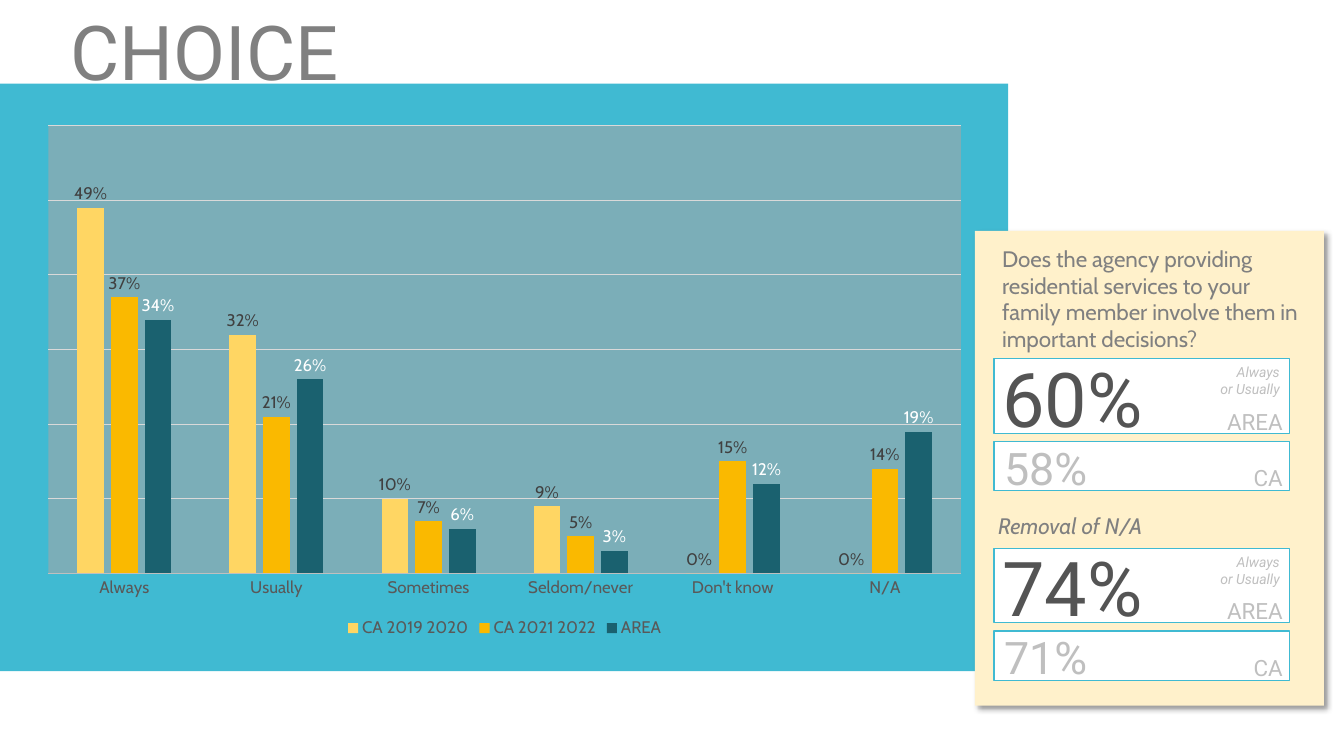
from lxml import etree
from pptx import Presentation
from pptx.chart.data import CategoryChartData
from pptx.dml.color import RGBColor
from pptx.enum.chart import XL_CHART_TYPE, XL_LABEL_POSITION, XL_LEGEND_POSITION, XL_TICK_MARK
from pptx.enum.shapes import MSO_SHAPE
from pptx.enum.text import MSO_ANCHOR, PP_ALIGN
from pptx.oxml import parse_xml
from pptx.oxml.ns import nsdecls, qn
from pptx.util import Inches, Pt

TEAL = RGBColor(0x40, 0xBA, 0xD2)
CREAM = RGBColor(0xFF, 0xF1, 0xCB)
WHITE = RGBColor(0xFF, 0xFF, 0xFF)
GREY = RGBColor(0x80, 0x80, 0x80)
DARK = RGBColor(0x54, 0x54, 0x54)
PALE = RGBColor(0xBF, 0xBF, 0xBF)
GRID = RGBColor(0xD9, 0xD9, 0xD9)
LABEL = RGBColor(0x40, 0x40, 0x40)
AXIS = RGBColor(0x59, 0x59, 0x59)

LOCAL = "AREA"
CATEGORIES = ["Always", "Usually", "Sometimes", "Seldom/never", "Don't know", "N/A"]
SERIES = [
    ("CA 2019 2020", (0.49, 0.32, 0.10, 0.09, 0, 0), RGBColor(0xFF, 0xD6, 0x63), LABEL),
    ("CA 2021 2022", (0.37, 0.21, 0.07, 0.05, 0.15, 0.14), RGBColor(0xFA, 0xB9, 0x00), LABEL),
    (LOCAL, (0.34, 0.26, 0.06, 0.03, 0.12, 0.19), RGBColor(0x1A, 0x61, 0x6F), WHITE),
]
QUESTION = ("Does the agency providing residential services to your family member "
            "involve them in important decisions?")


def set_font(font, size, color, name="Cabin", italic=False):
    font.size, font.name, font.italic = Pt(size), name, italic
    font.color.rgb = color


def fill_text(frame, text, size, color, name="Roboto", italic=False, align=PP_ALIGN.LEFT):
    frame.word_wrap = True
    frame.vertical_anchor = MSO_ANCHOR.TOP
    frame.text = text
    for para in frame.paragraphs:
        para.alignment = align
        set_font(para.runs[0].font, size, color, name, italic)


def add_text(shapes, text, left, top, width, height, **style):
    box = shapes.add_textbox(Inches(left), Inches(top), Inches(width), Inches(height))
    fill_text(box.text_frame, text, **style)


def add_rect(shapes, left, top, width, height, fill, line=None):
    rect = shapes.add_shape(MSO_SHAPE.RECTANGLE, Inches(left), Inches(top),
                            Inches(width), Inches(height))
    rect.shadow.inherit = False
    rect.fill.solid()
    rect.fill.fore_color.rgb = fill
    if line is None:
        rect.line.fill.background()
    else:
        rect.line.color.rgb = line
        rect.line.width = Pt(0.85)
    return rect


def cast_shadow(shape):
    effects = shape.element.spPr.find(qn("a:effectLst"))
    effects.append(parse_xml(
        f'<a:outerShdw {nsdecls("a")} blurRad="{Pt(4)}" dist="{Pt(3)}" dir="2700000" '
        'algn="tl" rotWithShape="0"><a:srgbClr val="000000"><a:alpha val="40000"/>'
        '</a:srgbClr></a:outerShdw>'))


def add_title(slide, left, top, width, height):
    title = slide.shapes.title
    title.left, title.top = Inches(left), Inches(top)
    title.width, title.height = Inches(width), Inches(height)
    fill_text(title.text_frame, "CHOICE", size=54, color=GREY)


def style_plot(chart):
    """Fix the inner plot frame and give it a translucent grey fill."""
    area = chart.element.chart.plotArea
    for layout in area.findall(qn("c:layout")):
        area.remove(layout)
    layout = parse_xml(f'<c:layout {nsdecls("c")}><c:manualLayout/></c:layout>')
    settings = [("layoutTarget", "inner"), ("xMode", "edge"), ("yMode", "edge"),
                ("x", "0.02"), ("y", "0.02"), ("w", "0.96"), ("h", "0.85")]
    for tag, value in settings:
        etree.SubElement(layout[0], qn(f"c:{tag}")).set("val", value)
    area.insert(0, layout)
    area.append(parse_xml(
        f'<c:spPr {nsdecls("c", "a")}><a:solidFill><a:srgbClr val="A6A6A6">'
        '<a:alpha val="58000"/></a:srgbClr></a:solidFill></c:spPr>'))


def style_axes(chart):
    cat, val = chart.category_axis, chart.value_axis
    cat.major_tick_mark = cat.minor_tick_mark = XL_TICK_MARK.NONE
    set_font(cat.tick_labels.font, 12, AXIS)
    cat.format.line.color.rgb = PALE
    cat.format.line.width = Pt(0.75)
    val.minimum_scale, val.maximum_scale, val.major_unit = 0, 0.6, 0.1
    val.visible = False
    val.has_major_gridlines = True
    val.major_gridlines.format.line.color.rgb = GRID
    val.major_gridlines.format.line.width = Pt(0.75)


def add_bars(slide, left, top, width, height):
    data = CategoryChartData(number_format="0%")
    data.categories = CATEGORIES
    for name, values, _, _ in SERIES:
        data.add_series(name, values)
    chart = slide.shapes.add_chart(XL_CHART_TYPE.COLUMN_CLUSTERED, Inches(left), Inches(top),
                                   Inches(width), Inches(height), data).chart
    set_font(chart.font, 12, AXIS)
    chart.has_title = False
    chart.has_legend = True
    chart.legend.position = XL_LEGEND_POSITION.BOTTOM
    chart.legend.include_in_layout = False
    set_font(chart.legend.font, 12, AXIS)
    plot = chart.plots[0]
    plot.vary_by_categories = False
    plot.gap_width, plot.overlap = 219, -27
    for series, (_, _, fill, color) in zip(plot.series, SERIES):
        series.format.fill.solid()
        series.format.fill.fore_color.rgb = fill
        labels = series.data_labels
        labels.show_value = True
        labels.position = XL_LABEL_POSITION.OUTSIDE_END
        labels.number_format, labels.number_format_is_linked = "0%", False
        set_font(labels.font, 12, color)
    style_axes(chart)
    style_plot(chart)


def add_scores(shapes, left, top, width, local, state):
    """Stack the large local score above the smaller state score."""
    lower = top + 0.82
    right = left + width
    add_rect(shapes, left, top, width, 0.74, WHITE, TEAL)
    add_rect(shapes, left, lower, width, 0.49, WHITE, TEAL)
    add_text(shapes, local, left - 0.02, top - 0.12, 1.86, 1.01, size=54, color=DARK)
    add_text(shapes, state, left, lower - 0.06, 1.86, 0.64, size=32, color=PALE)
    add_text(shapes, "Always\nor Usually", right - 1.3, top, 1.3, 0.44,
             size=10, color=PALE, italic=True, align=PP_ALIGN.RIGHT)
    for name, y in ((LOCAL, top + 0.44), ("CA", lower + 0.18)):
        add_text(shapes, name, right - 0.97, y, 1, 0.37,
                 size=16, color=PALE, align=PP_ALIGN.RIGHT)


def add_panel(slide, left, top, width, height):
    shapes = slide.shapes.add_group_shape().shapes
    cast_shadow(add_rect(shapes, left, top, width, height, CREAM))
    add_text(shapes, QUESTION, left + 0.17, top + 0.09, 3.18, 1.18,
             size=16, color=GREY, name="Cabin")
    add_scores(shapes, left + 0.19, top + 1.27, 2.93, "60%", "58%")
    add_text(shapes, "Removal of N/A", left + 0.13, top + 2.74, 3.18, 0.37,
             size=16, color=GREY, name="Cabin", italic=True)
    add_scores(shapes, left + 0.19, top + 3.15, 2.93, "74%", "71%")


def main():
    deck = Presentation()
    deck.slide_width, deck.slide_height = Inches(13.33), Inches(7.5)
    slide = deck.slides.add_slide(deck.slide_layouts[5])
    add_rect(slide.shapes, 0, 0.83, 10, 5.83, TEAL)
    add_title(slide, 0.6, 0, 10, 1.01)
    add_bars(slide, 0.29, 1.14, 9.43, 5.23)
    add_panel(slide, 9.67, 2.29, 3.46, 4.71)
    deck.save("out.pptx")


if __name__ == "__main__":
    main()
